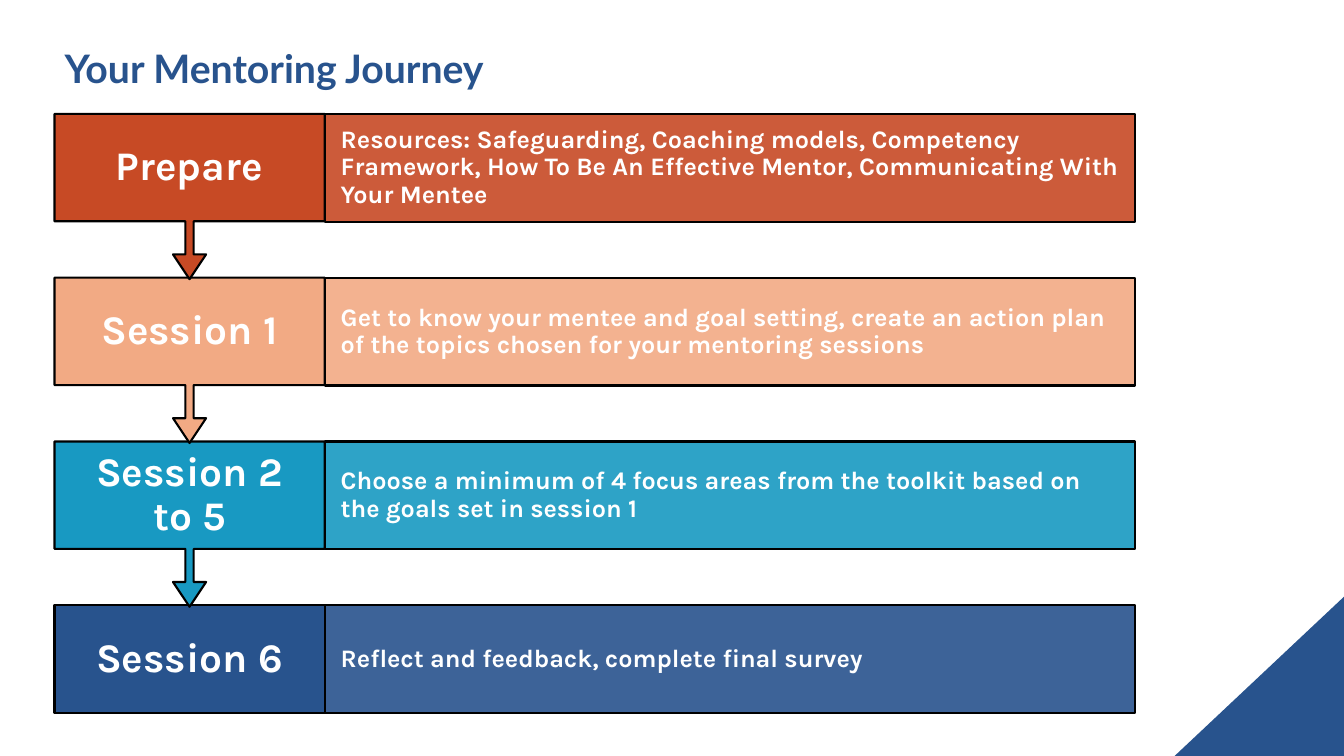
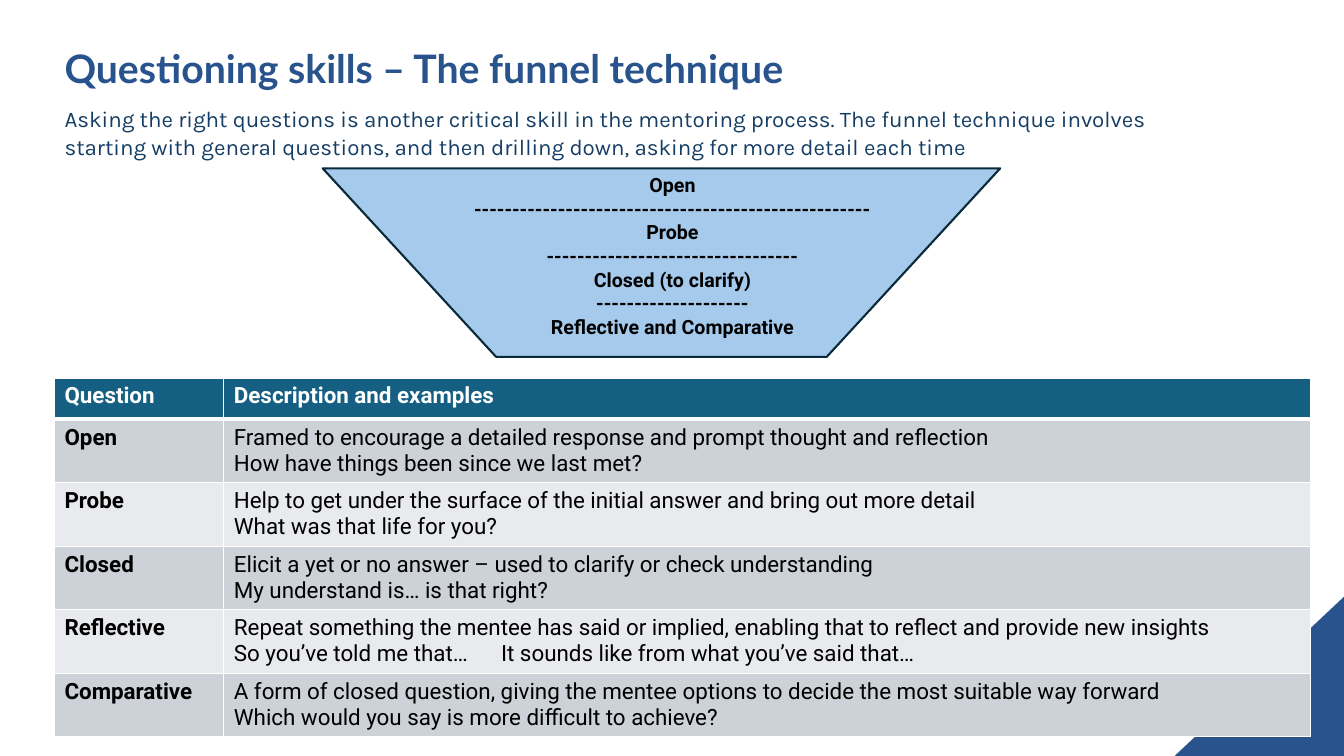
import pptx
import pptx.util
import pptx.dml.color
import pptx.enum.shapes
import pptx.enum.text
import pptx.oxml.ns
import lxml.etree

Inches = pptx.util.Inches
Pt = pptx.util.Pt
Color = pptx.dml.color.RGBColor
Kind = pptx.enum.shapes.MSO_SHAPE
Align = pptx.enum.text.PP_ALIGN
Anchor = pptx.enum.text.MSO_ANCHOR
Fit = pptx.enum.text.MSO_AUTO_SIZE
qn = pptx.oxml.ns.qn

NAVY = Color.from_string("28538D")
TEAL = Color.from_string("1899C2")
PEACH = Color.from_string("F2AA84")
RUST = Color.from_string("C74A25")
INK = Color.from_string("163E64")
SKY = Color.from_string("A6CAEC")
EDGE = Color.from_string("092A39")
HEAD = Color.from_string("156082")
GREY = Color.from_string("CCD2D8")
PALE = Color.from_string("E8EAED")
WHITE = Color.from_string("FFFFFF")
BLACK = Color.from_string("000000")

LEFT = 0.54

STEPS = [
    ("Prepare", RUST,
     "Resources: Safeguarding, Coaching models, Competency Framework, "
     "How To Be An Effective Mentor, Communicating With Your Mentee"),
    ("Session 1", PEACH,
     "Get to know your mentee and goal setting, create an action plan "
     "of the topics chosen for your mentoring sessions"),
    ("Session 2 to 5", TEAL,
     "Choose a minimum of 4 focus areas from the toolkit based on "
     "the goals set in session 1"),
    ("Session 6", NAVY, "Reflect and feedback, complete final survey"),
]

INTRO = ("Asking the right questions is another critical skill in the "
         "mentoring process. The funnel technique involves starting with "
         "general questions, and then drilling down, asking for more detail "
         "each time")

FUNNEL = ["Open", "-" * 52, "Probe", "-" * 33, "Closed (to clarify)",
          "-" * 20, "Reflective and Comparative"]

ROWS = [
    ("Question", ["Description and examples"]),
    ("Open", [
        "Framed to encourage a detailed response and prompt thought and reflection",
        "How have things been since we last met?"]),
    ("Probe", [
        "Help to get under the surface of the initial answer and bring out more detail",
        "What was that life for you?"]),
    ("Closed", [
        "Elicit a yet or no answer – used to clarify or check understanding",
        "My understand is… is that right?"]),
    ("Reflective", [
        "Repeat something the mentee has said or implied, enabling that to reflect and provide new insights",
        "So you’ve told me that…\tIt sounds like from what you’ve said that…"]),
    ("Comparative", [
        "A form of closed question, giving the mentee options to decide the most suitable way forward",
        "Which would you say is more difficult to achieve?"]),
]

TITLE = dict(name="Lato", size=Pt(28), bold=True)
STEP = dict(name="Karla", size=Pt(29), bold=True)
NOTE = dict(name="Karla", size=Pt(18), bold=True)
LEAD = dict(name="Karla", size=Pt(16), bold=False)
LABEL = dict(name="Roboto", size=Pt(14), bold=True)
CELL = dict(name="Roboto", size=Pt(16))

TIGHT = dict(alignment=Align.LEFT, line_spacing=0.9)
MID = dict(alignment=Align.CENTER, line_spacing=0.9)
FLOW = dict(alignment=Align.LEFT, line_spacing=Pt(20.2), space_before=Pt(0))
BOX = dict(word_wrap=True, vertical_anchor=Anchor.MIDDLE, auto_size=Fit.NONE)
TOP = dict(BOX, vertical_anchor=Anchor.TOP)


def put(thing, vals):
    for key, val in vals.items():
        setattr(thing, key, val)


def sub(node, tag, **vals):
    return lxml.etree.SubElement(node, qn(tag), **vals)


def place(thing, left, top, width, height):
    put(thing, dict(left=Inches(left), top=Inches(top),
                    width=Inches(width), height=Inches(height)))


def write(frame, lines, look, color, para):
    for num, line in enumerate(lines):
        part = frame.paragraphs[0] if num == 0 else frame.add_paragraph()
        if "\t" in line:
            tabs = sub(part._p.get_or_add_pPr(), "a:tabLst")
            sub(tabs, "a:tab", pos=str(Inches(2.65)), algn="l")
        put(part, para)
        run = part.add_run()
        run.text = line
        put(run.font, look)
        run.font.color.rgb = color


def draw(slide, kind, area, fill, line=None):
    shape = slide.shapes.add_shape(kind, *map(Inches, area))
    shape.shadow.inherit = False
    shape.fill.solid()
    shape.fill.fore_color.rgb = fill
    if line is None:
        shape.line.fill.background()
    else:
        shape.line.color.rgb = line
        shape.line.width = Pt(1.5)
    return shape


def page(deck, kind, title):
    slide = deck.slides.add_slide(deck.slide_layouts[kind])
    head = slide.shapes.title
    place(head, LEFT, 0.43, 11.02, 0.55)
    put(head.text_frame, BOX)
    write(head.text_frame, [title], TITLE, NAVY, TIGHT)
    return slide


def corner(deck, slide):
    shape = draw(slide, Kind.RIGHT_TRIANGLE, (11.65, 5.92, 1.68, 1.58), NAVY)
    shape._element.spPr.find(qn("a:xfrm")).set("flipH", "1")
    deck.slide_master.shapes._spTree.insert(2, shape._element)


def journey(deck):
    slide = page(deck, 5, "Your Mentoring Journey")
    corner(deck, slide)
    side, wide, high, tall = 2.68, 8.04, 1.07, 1.64
    first, step = 1.13, 1.625
    for num, (name, color, note) in reversed(list(enumerate(STEPS))):
        top = first + num * step
        last = num == len(STEPS) - 1
        kind = Kind.RECTANGLE if last else Kind.DOWN_ARROW_CALLOUT
        area = (LEFT, top, side, high if last else tall)
        label = draw(slide, kind, area, color, BLACK)
        if not last:
            for spot, val in enumerate((0.05, 0.1, 0.15, 0.65)):
                label.adjustments[spot] = val
        band = draw(slide, Kind.RECTANGLE, (LEFT + side, top, wide, high),
                    color, BLACK)
        tint = band._element.spPr.find(qn("a:solidFill"))[0]
        sub(tint, "a:alpha", val="90000")
        for shape, text, look, para, pad in (
                (label, name, STEP, MID, 0.19), (band, note, NOTE, TIGHT, 0.16)):
            put(shape.text_frame, dict(
                BOX, margin_left=Inches(pad), margin_right=Inches(pad),
                margin_top=Inches(0), margin_bottom=Inches(0)))
            write(shape.text_frame, [text], look, WHITE, para)


def grid(slide):
    highs = [0.41] + [0.63] * (len(ROWS) - 1)
    wides = (1.68, 10.78)
    table = slide.shapes.add_table(
        len(ROWS), 2, Inches(LEFT), Inches(3.75),
        Inches(sum(wides)), Inches(sum(highs))).table
    for col, wide in zip(table.columns, wides):
        col.width = Inches(wide)
    for num, (name, lines) in enumerate(ROWS):
        table.rows[num].height = Inches(highs[num])
        fill = HEAD if num == 0 else (GREY if num % 2 else PALE)
        for col, text in enumerate(([name], lines)):
            cell = table.cell(num, col)
            props = cell._tc.get_or_add_tcPr()
            for edge in "LRTB":
                thick = 3 if (num, edge) in ((0, "B"), (1, "T")) else 1
                line = sub(props, "a:ln" + edge, w=str(Pt(thick)))
                sub(sub(line, "a:solidFill"), "a:srgbClr", val=str(WHITE))
            cell.fill.solid()
            cell.fill.fore_color.rgb = fill
            write(cell.text_frame, text, dict(CELL, bold=num == 0 or col == 0),
                  WHITE if num == 0 else BLACK, {})


def funnel(deck):
    slide = page(deck, 1, "Questioning skills – The funnel technique")
    body = slide.placeholders[1]
    place(body, LEFT, 0.98, 11.78, 0.69)
    put(body.text_frame, TOP)
    props = body.text_frame.paragraphs[0]._p.get_or_add_pPr()
    put_off = dict(marL="0", indent="0")
    for key, val in put_off.items():
        props.set(key, val)
    sub(props, "a:buNone")
    write(body.text_frame, [INTRO], LEAD, INK, FLOW)
    cone = draw(slide, Kind.TRAPEZOID, (3.2, 1.67, 6.72, 1.87), SKY, EDGE)
    cone.rotation = 180
    cone.adjustments[0] = 0.92
    box = slide.shapes.add_textbox(*map(Inches, (4.34, 1.67, 4.66, 1.75)))
    put(box.text_frame, TOP)
    write(box.text_frame, FUNNEL, LABEL, BLACK, dict(alignment=Align.CENTER))
    grid(slide)


def main():
    deck = pptx.Presentation()
    put(deck, dict(slide_width=Inches(13.33), slide_height=Inches(7.5)))
    journey(deck)
    funnel(deck)
    deck.save("out.pptx")


if __name__ == "__main__":
    main()
